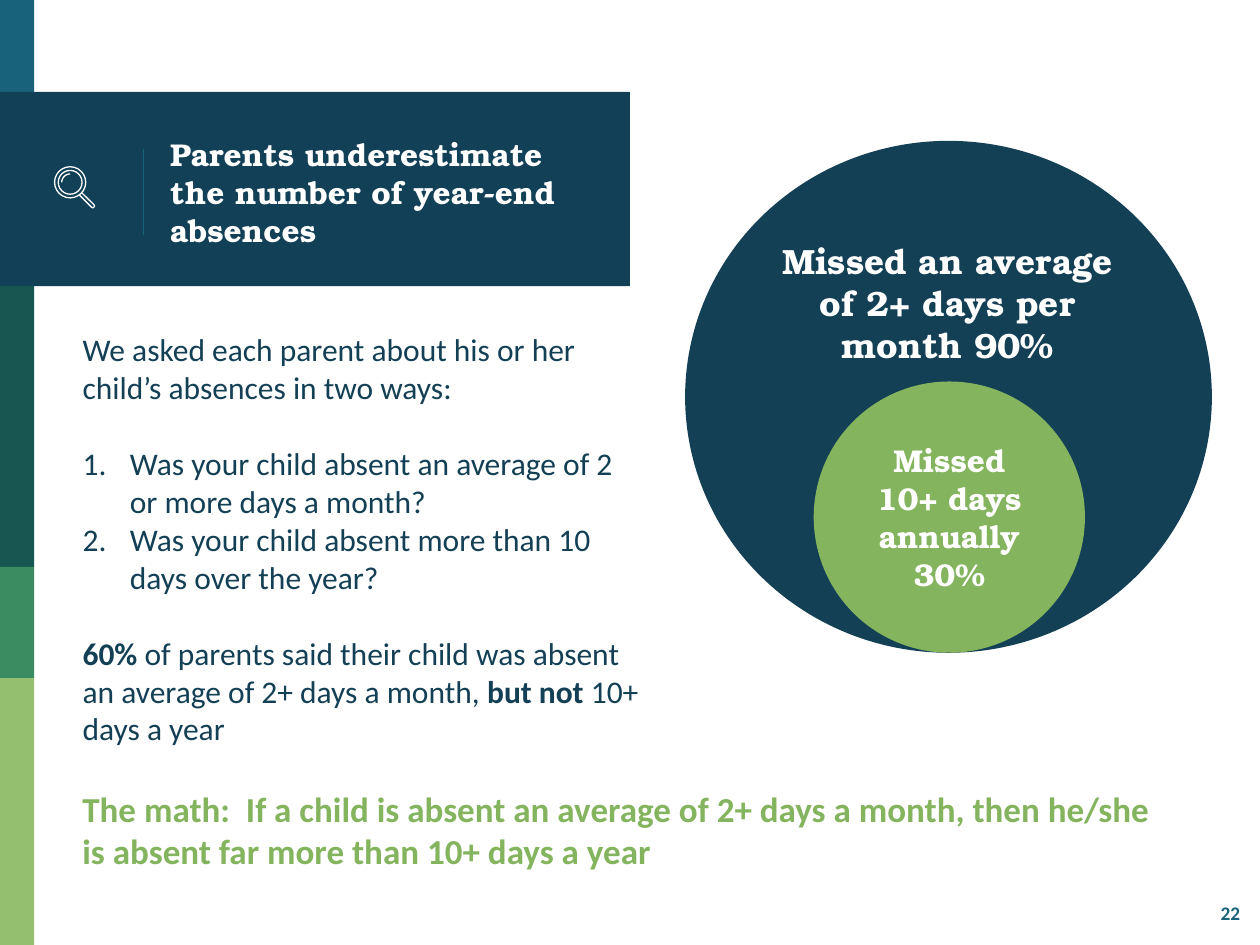
import math

from lxml import etree
from pptx import Presentation
from pptx.dml.color import RGBColor
from pptx.enum import shapes, text
from pptx.oxml.ns import qn
from pptx.util import Pt

COLORS = {
    "teal": "18637B",
    "banner": "124057",
    "forest": "165751",
    "green": "3B8D61",
    "light green": "94BF6E",
    "navy": "144056",
    "lime": "84B45E",
    "number": "1B637A",
    "white": "FFFFFF",
}
SERIF = "TeX Gyre Bonum"
SANS = "Calibri"


def add_filled(parent, kind, left, top, width, height, color):
    shape = parent.add_shape(kind, Pt(left), Pt(top), Pt(width), Pt(height))
    shape.shadow.inherit = False
    shape.fill.solid()
    shape.fill.fore_color.rgb = RGBColor.from_string(COLORS[color])
    shape.line.fill.background()
    return shape


def add_run(paragraph, words, font, size, color, bold=True):
    run = paragraph.add_run()
    run.text = words
    run.font.name = font
    run.font.size = Pt(size)
    run.font.bold = bold
    run.font.color.rgb = RGBColor.from_string(COLORS[color])


presentation = Presentation()
presentation.slide_width = Pt(720)
presentation.slide_height = Pt(540)
slide = presentation.slides.add_slide(presentation.slide_layouts[1])

# Side bands and title banner
for top, width, height, color in [
    (0, 19.5, 55, "teal"),
    (52.5, 360, 111, "banner"),
    (163.5, 19.5, 160.5, "forest"),
    (324, 19.5, 63.5, "green"),
    (387.5, 19.5, 152.5, "light green"),
]:
    add_filled(slide.shapes, shapes.MSO_SHAPE.RECTANGLE, 0, top, width, height, color)

divider = slide.shapes.add_connector(
    shapes.MSO_CONNECTOR.STRAIGHT, Pt(82), Pt(85), Pt(82), Pt(134.5))
divider.line.color.rgb = RGBColor.from_string(COLORS["teal"])
divider.line.width = Pt(0.75)
etree.SubElement(divider.element.spPr, qn("a:effectLst"))

# Title, brought in front of the banner
title = slide.shapes.title
title.element.getparent().append(title.element)
title.left, title.top, title.width, title.height = Pt(90), Pt(55.5), Pt(253), Pt(108)
frame = title.text_frame
frame.word_wrap = True
frame.auto_size = text.MSO_AUTO_SIZE.NONE
frame.vertical_anchor = text.MSO_ANCHOR.MIDDLE
frame.margin_left = frame.margin_right = frame.margin_top = frame.margin_bottom = Pt(7.2)
paragraph = frame.paragraphs[0]
paragraph.alignment = text.PP_ALIGN.LEFT
add_run(paragraph, "Parents underestimate the number of year-end absences", SERIF, 18, "white")

# Magnifying glass
glass = slide.shapes.add_group_shape()
center_x, center_y = 40.1, 104.2
icon_parts = []
for radius in (8.9, 6.8):
    ring = glass.shapes.add_shape(
        shapes.MSO_SHAPE.OVAL, Pt(center_x - radius), Pt(center_y - radius),
        Pt(2 * radius), Pt(2 * radius))
    icon_parts.append(ring)

glint = [(center_x + 4.8 * math.cos(math.radians(angle)),
          center_y + 4.8 * math.sin(math.radians(angle)))
         for angle in range(180, 271, 10)]
handle = [(45.4, 111.5), (52.3, 118.4), (53, 118.8), (53.7, 118.4),
          (54, 117.7), (53.7, 117), (46.8, 110.2)]
for points in (glint, handle):
    corners = [(Pt(x), Pt(y)) for x, y in points]
    builder = glass.shapes.build_freeform(*corners[0])
    builder.add_line_segments(corners[1:], close=False)
    icon_parts.append(builder.convert_to_shape())

for part in icon_parts:
    part.shadow.inherit = False
    part.fill.background()
    part.line.color.rgb = RGBColor.from_string(COLORS["white"])
    part.line.width = Pt(0.75)

# Survey questions
body = slide.placeholders[1]
body.left, body.top, body.width, body.height = Pt(40), Pt(185), Pt(335.5), Pt(264)
frame = body.text_frame
frame.word_wrap = True
frame.auto_size = text.MSO_AUTO_SIZE.NONE
survey = [
    (False, 0, [("We asked each parent about his or her child’s absences in two ways:", False)]),
    (True, 22, [("Was your child absent an average of 2 or more days a month?", False)]),
    (True, 0, [("Was your child absent more than 10 days over the year?", False)]),
    (False, 22, [("60% ", True),
                 ("of parents said their child was absent an average of 2+ days a month, ", False),
                 ("but not", True),
                 (" 10+ days a year", False)]),
]
for index, (numbered, space_before, runs) in enumerate(survey):
    paragraph = frame.add_paragraph() if index else frame.paragraphs[0]
    properties = paragraph._p.get_or_add_pPr()
    indent = Pt(27) if numbered else 0
    properties.set("marL", str(indent))
    properties.set("indent", str(-indent))
    if numbered:
        etree.SubElement(properties, qn("a:buFont"), typeface="+mj-lt")
        etree.SubElement(properties, qn("a:buAutoNum"), type="arabicPeriod")
    else:
        etree.SubElement(properties, qn("a:buNone"))
    paragraph.space_before = Pt(space_before)
    for words, bold in runs:
        add_run(paragraph, words, SANS, 18, "navy", bold)

# Nested circles
circles = slide.shapes.add_group_shape()
add_filled(circles.shapes, shapes.MSO_SHAPE.OVAL, 391.5, 80.5, 301, 292.5, "navy")
inner = add_filled(circles.shapes, shapes.MSO_SHAPE.OVAL, 465, 218, 155, 155, "lime")
frame = inner.text_frame
frame.word_wrap = True
frame.vertical_anchor = text.MSO_ANCHOR.MIDDLE
frame.margin_left = frame.margin_right = frame.margin_top = frame.margin_bottom = Pt(7.2)
frame.paragraphs[0].alignment = text.PP_ALIGN.CENTER
add_run(frame.paragraphs[0], "Missed 10+ days annually 30%", SERIF, 18, "white")

# Text boxes: circle label, conclusion, page number
for parent, left, top, width, height, words, font, size, color, alignment in [
    (circles.shapes, 432, 133.5, 219, 80, "Missed an average of 2+ days per month 90%",
     SERIF, 20, "white", text.PP_ALIGN.CENTER),
    (slide.shapes, 40, 446.5, 628, 75,
     "The math:  If a child is absent an average of 2+ days a month, "
     "then he/she is absent far more than 10+ days a year",
     SANS, 20, "lime", text.PP_ALIGN.LEFT),
    (slide.shapes, 690.5, 511.5, 36, 21, "22", SANS, 11, "number", text.PP_ALIGN.LEFT),
]:
    box = parent.add_textbox(Pt(left), Pt(top), Pt(width), Pt(height))
    box.text_frame.word_wrap = True
    paragraph = box.text_frame.paragraphs[0]
    paragraph.alignment = alignment
    add_run(paragraph, words, font, size, color)

presentation.save("out.pptx")
